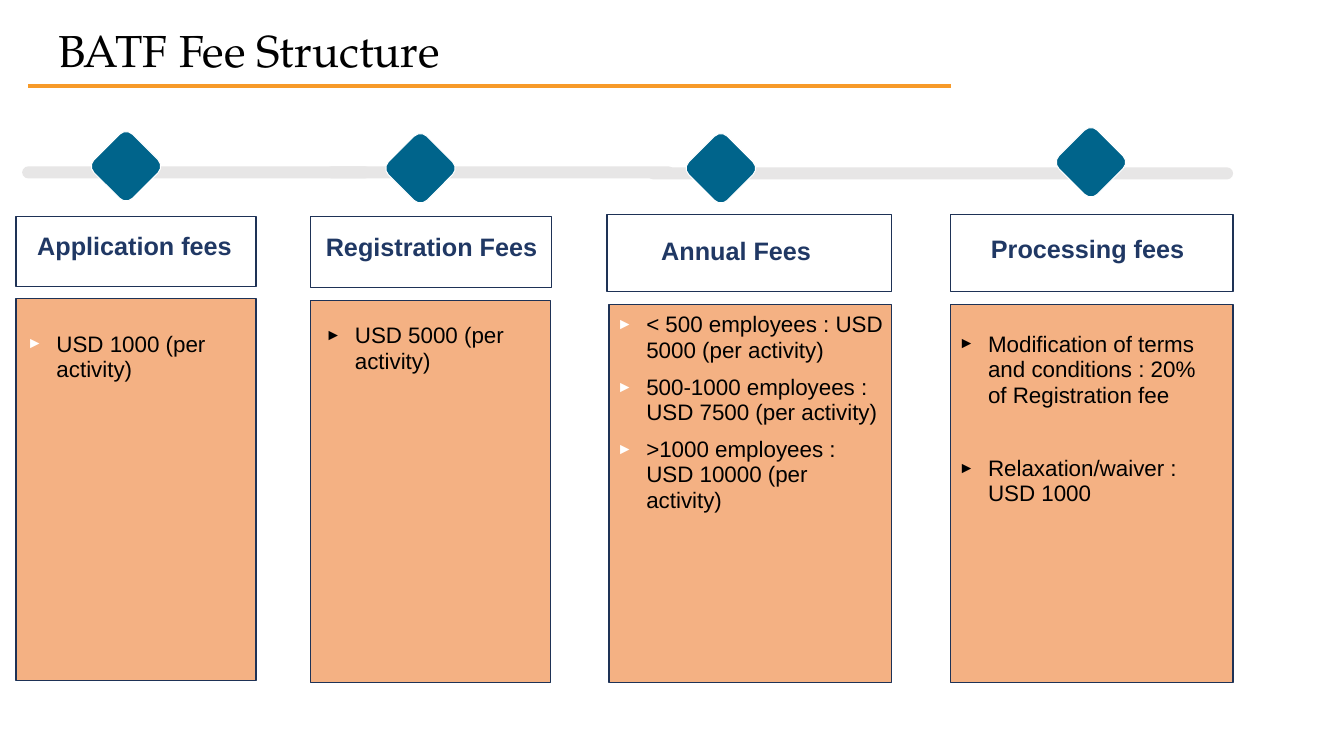
from collections import namedtuple

from lxml.etree import SubElement
from pptx import Presentation
from pptx.dml.color import RGBColor
from pptx.enum.shapes import MSO_CONNECTOR, MSO_SHAPE
from pptx.enum.text import MSO_ANCHOR, PP_ALIGN
from pptx.oxml.ns import qn
from pptx.util import Inches, Pt

WHITE = RGBColor(0xFF, 0xFF, 0xFF)
BLACK = RGBColor(0, 0, 0)
NAVY = RGBColor(0x1E, 0x32, 0x56)
INK = RGBColor(0x20, 0x38, 0x64)
PEACH = RGBColor(0xF4, 0xB1, 0x83)
ORANGE = RGBColor(0xF7, 0x9A, 0x29)
GREY = RGBColor(0xE7, 0xE6, 0xE6)
TEAL = RGBColor(0x00, 0x64, 0x8B)

Box = namedtuple("Box", "x y w h")
# head and card are the frames; name and list are the text areas over them
Fee = namedtuple("Fee", "title align head name card list bullet items")

FEES = [
    Fee("Application fees", PP_ALIGN.CENTER,
        Box(0.16, 2.15, 2.38, 0.69), Box(0.25, 2.26, 2.17, 0.39),
        Box(0.16, 2.96, 2.38, 3.79), Box(0.19, 3.21, 2.18, 3.5),
        WHITE, [("USD 1000 (per activity)", 0)]),
    Fee("Registration Fees", PP_ALIGN.CENTER,
        Box(3.08, 2.15, 2.39, 0.7), Box(2.99, 2.27, 2.58, 0.39),
        Box(3.08, 2.98, 2.38, 3.79), Box(3.15, 3.13, 2.31, 3.36),
        BLACK, [("USD 5000 (per activity)", 0)]),
    Fee("Annual Fees", PP_ALIGN.LEFT,
        Box(6.02, 2.13, 2.82, 0.76), Box(6.46, 2.29, 2.38, 0.4),
        Box(6.04, 3.02, 2.8, 3.75), Box(6.04, 3.02, 2.8, 3.57),
        WHITE, [("< 500 employees : USD 5000 (per activity)", 0),
                ("500-1000 employees : USD 7500 (per activity)", 0),
                (">1000 employees : USD 10000 (per activity)", 0)]),
    Fee("Processing fees", PP_ALIGN.LEFT,
        Box(9.43, 2.13, 2.8, 0.76), Box(9.73, 2.27, 2.42, 0.4),
        Box(9.43, 3.02, 2.8, 3.75), Box(9.43, 3.21, 2.64, 3.1),
        BLACK, [("Modification of terms and conditions : 20% of Registration fee", 0),
                ("Relaxation/waiver : USD 1000", 26)]),
]
BARS = [Box(0.22, 1.65, 3.46, 0.12), Box(3.23, 1.65, 3.46, 0.12),
        Box(6.42, 1.66, 5.81, 0.12)]
MARKS = [(0.98, 1.38), (3.9, 1.4), (6.88, 1.4), (10.55, 1.34)]
MARK = 0.54


def place(box):
    return [Inches(n) for n in box]


def add_block(slide, kind, box, fill, line=None, width=1):
    shape = slide.shapes.add_shape(kind, *place(box))
    shape.shadow.inherit = False
    shape.fill.solid()
    shape.fill.fore_color.rgb = fill
    if line is None:
        shape.line.fill.background()
    else:
        shape.line.color.rgb = line
        shape.line.width = Pt(width)
    return shape


def set_frame(frame, left, top, right, bottom):
    frame.word_wrap = True
    frame.vertical_anchor = MSO_ANCHOR.TOP
    frame.margin_left, frame.margin_top = Inches(left), Inches(top)
    frame.margin_right, frame.margin_bottom = Inches(right), Inches(bottom)


def add_run(para, text, font, size, color, bold=False):
    run = para.add_run()
    run.text = text
    run.font.name = font
    run.font.size = Pt(size)
    run.font.bold = bold
    run.font.color.rgb = color


def add_bullet(para, color):
    props = para._p.get_or_add_pPr()
    props.set("marL", str(Inches(0.29)))
    props.set("indent", str(-Inches(0.29)))
    tint = SubElement(props, qn("a:buClr"))
    SubElement(tint, qn("a:srgbClr"), val=str(color))
    SubElement(props, qn("a:buSzPct"), val="70000")
    SubElement(props, qn("a:buFont"), typeface="Arial")
    SubElement(props, qn("a:buChar"), char="►")


def add_title(slide, box):
    title = slide.shapes.title
    title.left, title.top, title.width, title.height = place(box)
    frame = title.text_frame
    set_frame(frame, 0.13, 0.13, 0.13, 0.13)
    para = frame.paragraphs[0]
    para.alignment = PP_ALIGN.LEFT
    para.line_spacing = 1.0
    para.space_before = Pt(0)
    add_run(para, "BATF Fee Structure", "TeX Gyre Pagella", 32, BLACK)

    y = Inches(box.y + 0.75)
    rule = slide.shapes.add_connector(
        MSO_CONNECTOR.STRAIGHT, Inches(box.x - 0.17), y, Inches(9.43), y)
    rule.line.color.rgb = ORANGE
    rule.line.width = Pt(3)
    SubElement(rule._element.spPr, qn("a:effectLst"))


def add_head(slide, fee):
    add_block(slide, MSO_SHAPE.RECTANGLE, fee.head, WHITE, NAVY)
    frame = slide.shapes.add_textbox(*place(fee.name)).text_frame
    set_frame(frame, 0.1, 0.05, 0.1, 0.05)
    para = frame.paragraphs[0]
    para.alignment = fee.align
    if fee.align == PP_ALIGN.CENTER:
        para.line_spacing = 0.95
        para.space_after = Pt(6)
    add_run(para, fee.title, "Arial", 18, INK, True)


def add_card(slide, fee):
    add_block(slide, MSO_SHAPE.RECTANGLE, fee.card, PEACH, NAVY)
    frame = slide.shapes.add_textbox(*place(fee.list)).text_frame
    set_frame(frame, 0.08, 0.08, 0.05, 0.08)
    for i, (text, gap) in enumerate(fee.items):
        para = frame.add_paragraph() if i else frame.paragraphs[0]
        para.line_spacing = 0.95
        para.space_before = Pt(gap)
        para.space_after = Pt(8)
        add_bullet(para, fee.bullet)
        add_run(para, text, "Arial", 16, BLACK)


def add_track(slide, bars, marks):
    for box in bars:
        bar = add_block(slide, MSO_SHAPE.ROUNDED_RECTANGLE, box, GREY)
        bar.adjustments[0] = 0.5
    for x, y in marks:
        mark = add_block(slide, MSO_SHAPE.ROUNDED_RECTANGLE,
                         Box(x, y, MARK, MARK), TEAL, WHITE, 0.75)
        mark.rotation = 45


def main():
    deck = Presentation()
    deck.slide_width, deck.slide_height = Inches(13.33), Inches(7.5)
    slide = deck.slides.add_slide(deck.slide_layouts[5])
    add_title(slide, Box(0.45, 0.1, 12.42, 0.81))
    for fee in FEES:
        add_head(slide, fee)
        add_card(slide, fee)
    add_track(slide, BARS, MARKS)
    deck.save("out.pptx")


if __name__ == "__main__":
    main()
